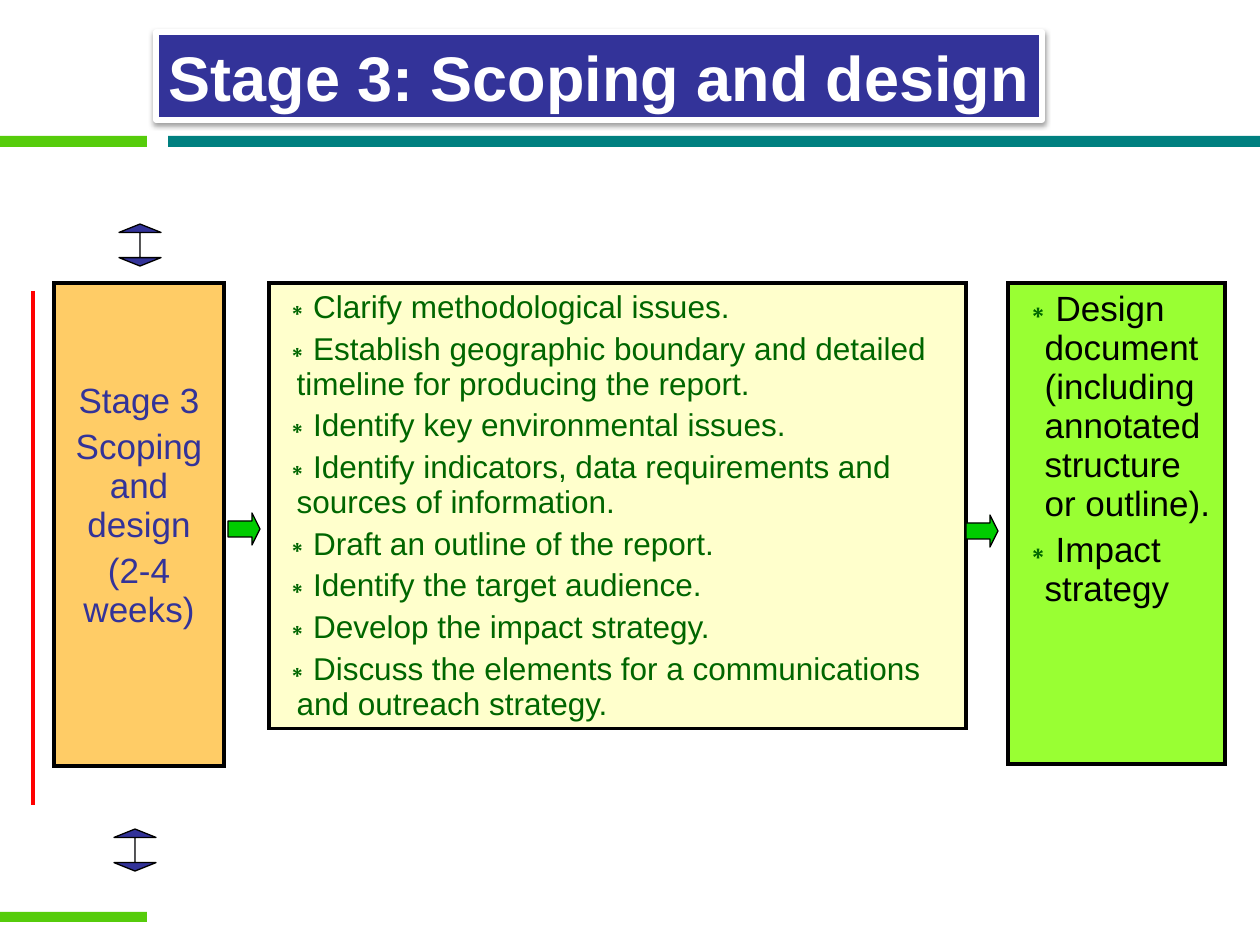
from dataclasses import dataclass

from lxml.etree import SubElement
from pptx import Presentation
from pptx.dml.color import RGBColor
from pptx.enum.shapes import MSO_CONNECTOR, MSO_SHAPE
from pptx.enum.text import MSO_ANCHOR, MSO_AUTO_SIZE, PP_ALIGN
from pptx.oxml.ns import qn
from pptx.util import Emu, Inches, Pt

PX_PER_INCH = 126
FONT = "Arial"
COLORS = {
    "teal": "008080", "lime": "56CC0B", "navy": "333399", "white": "FFFFFF",
    "black": "000000", "red": "FF0000", "arrow": "00CC00", "bullet": "006600",
    "orange": "FFCC66", "cream": "FFFFCC", "green": "99FF33",
}


@dataclass(frozen=True)
class Box:
    x: int
    y: int
    w: int
    h: int


@dataclass(frozen=True)
class Panel:
    box: Box
    row_height: int  # least height; the row grows with its text
    fill: str
    color: str
    size: int
    lines: tuple[str, ...]
    indent: int = 0  # hanging indent in px; 0 means centred, no bullets
    top: int = 7


@dataclass(frozen=True)
class Arrow:
    kind: MSO_SHAPE
    box: Box
    fill: str
    adjust: tuple[int, int]  # shaft width and head length, in percent


BARS = (
    (Box(168, 136, 1092, 11), "teal"),
    (Box(0, 136, 147, 11), "lime"),
    (Box(0, 912, 147, 10), "lime"),
)

PANELS = (
    Panel(Box(269, 283, 697, 481), 231, "cream", "bullet", 18, (
        "Clarify methodological issues.",
        "Establish geographic boundary and detailed timeline for producing the report.",
        "Identify key environmental issues.",
        "Identify indicators, data requirements and sources of information.",
        "Draft an outline of the report.",
        "Identify the target audience.",
        "Develop the impact strategy.",
        "Discuss the elements for a communications and outreach strategy.",
    ), indent=15),
    Panel(Box(54, 283, 170, 483), 483, "orange", "navy", 20, (
        "Stage 3", "Scoping and design", "(2-4 weeks)",
    ), top=99),
    Panel(Box(1008, 283, 217, 481), 481, "green", "black", 20, (
        "Design document (including annotated structure or outline).",
        "Impact strategy",
    ), indent=24),
)

UP_DOWN = (MSO_SHAPE.UP_DOWN_ARROW, "navy", (0, 20))
RIGHT = (MSO_SHAPE.RIGHT_ARROW, "arrow", (50, 25))
ARROWS = tuple(
    Arrow(kind, Box(x, y, side, side), fill, adjust)
    for (kind, fill, adjust), x, y, side in (
        (UP_DOWN, 114, 829, 42),
        (UP_DOWN, 119, 224, 42),
        (RIGHT, 966, 515, 32),
        (RIGHT, 228, 513, 32),
    )
)


def px(n: int) -> Emu:
    return Emu(round(n * 914400 / PX_PER_INCH))


def rgb(name: str) -> RGBColor:
    return RGBColor.from_string(COLORS[name])


def place(box: Box) -> tuple[Emu, ...]:
    return px(box.x), px(box.y), px(box.w), px(box.h)


def add_run(p, text: str, size: int, color: str, bold: bool = False) -> None:
    r = p.add_run()
    r.text = text
    r.font.name, r.font.size, r.font.bold = FONT, Pt(size), bold
    r.font.color.rgb = rgb(color)


def add_bullet(p, indent: int) -> None:
    ppr = p._p.get_or_add_pPr()
    ppr.set("marL", str(px(indent)))
    ppr.set("indent", str(-px(indent)))
    clr = SubElement(ppr, qn("a:buClr"))
    SubElement(clr, qn("a:srgbClr"), val=COLORS["bullet"])
    SubElement(ppr, qn("a:buFont"), typeface=FONT)
    SubElement(ppr, qn("a:buChar"), char="∗")


def add_borders(cell, color: str, width: float) -> None:
    tcpr = cell._tc.get_or_add_tcPr()
    for side in ("lnL", "lnR", "lnT", "lnB"):
        ln = SubElement(tcpr, qn(f"a:{side}"), w=str(Pt(width)))
        fill = SubElement(ln, qn("a:solidFill"))
        SubElement(fill, qn("a:srgbClr"), val=COLORS[color])


def add_panel(slide, panel: Panel) -> None:
    frame = slide.shapes.add_table(1, 1, *place(panel.box))
    table = frame.table
    table.first_row = table.horz_banding = False
    table.rows[0].height = px(panel.row_height)
    frame.height = px(panel.box.h)
    cell = table.cell(0, 0)
    add_borders(cell, "black", 2.25)
    cell.fill.solid()
    cell.fill.fore_color.rgb = rgb(panel.fill)
    cell.margin_top = px(panel.top)
    tf = cell.text_frame
    for i, line in enumerate(panel.lines):
        p = tf.add_paragraph() if i else tf.paragraphs[0]
        if panel.indent:
            add_bullet(p, panel.indent)
        else:
            p.alignment = PP_ALIGN.CENTER
        if i:
            p.space_before = Pt(panel.size * 0.2)
        add_run(p, line, panel.size, panel.color)


def add_filled(slide, kind: MSO_SHAPE, box: Box, fill: str):
    sp = slide.shapes.add_shape(kind, *place(box))
    sp.shadow.inherit = False
    sp.fill.solid()
    sp.fill.fore_color.rgb = rgb(fill)
    sp.line.fill.background()
    return sp


def add_arrow(slide, arrow: Arrow) -> None:
    sp = add_filled(slide, arrow.kind, arrow.box, arrow.fill)
    # Guides are written by name: the up-down arrow's defaults repeat adj1
    guides = sp._element.spPr.find(qn("a:prstGeom")).find(qn("a:avLst"))
    guides[:] = []
    for i, percent in enumerate(arrow.adjust, start=1):
        SubElement(guides, qn("a:gd"), name=f"adj{i}", fmla=f"val {percent * 1000}")
    sp.line.color.rgb = rgb("black")
    sp.line.width = Pt(0.75)


def add_side_line(slide, x: int, top: int, bottom: int) -> None:
    line = slide.shapes.add_connector(
        MSO_CONNECTOR.STRAIGHT, px(x), px(top), px(x), px(bottom))
    line.line.color.rgb = rgb("red")
    line.line.width = Pt(2.25)
    SubElement(line._element.spPr, qn("a:effectLst"))


def format_title(sp, text: str, box: Box) -> None:
    sp.left, sp.top, sp.width, sp.height = place(box)
    sp.fill.solid()
    sp.fill.fore_color.rgb = rgb("navy")
    sp.line.color.rgb = rgb("white")
    sp.line.width = Pt(3)
    # Soft shadow straight below the box
    sp.shadow.inherit = False
    effects = sp._element.spPr.find(qn("a:effectLst"))
    shadow = SubElement(effects, qn("a:outerShdw"), blurRad=str(Pt(3.1)),
                        dist=str(Pt(1.6)), dir="5400000", rotWithShape="0")
    clr = SubElement(shadow, qn("a:srgbClr"), val=COLORS["black"])
    SubElement(clr, qn("a:alpha"), val="38000")
    tf = sp.text_frame
    tf.word_wrap = True
    tf.auto_size = MSO_AUTO_SIZE.NONE
    tf.vertical_anchor = MSO_ANCHOR.TOP
    tf.margin_right = 0  # room for the title on one line
    p = tf.paragraphs[0]
    p.alignment = PP_ALIGN.LEFT
    add_run(p, text, 36, "white", bold=True)
    # Bring the title in front of the bars
    sp._element.getparent().append(sp._element)


def main() -> None:
    prs = Presentation()
    prs.slide_width, prs.slide_height = Inches(10), Inches(7.5)
    slide = prs.slides.add_slide(prs.slide_layouts[5])

    # Bars, then the panels for tasks, stage and outputs
    for box, fill in BARS:
        add_filled(slide, MSO_SHAPE.RECTANGLE, box, fill)
    for panel in PANELS:
        add_panel(slide, panel)

    # Flow arrows and side line
    for arrow in ARROWS:
        add_arrow(slide, arrow)
    add_side_line(slide, 33, 291, 805)

    # Title
    format_title(slide.shapes.title, "Stage 3: Scoping and design", Box(156, 32, 886, 88))
    prs.save("out.pptx")


if __name__ == "__main__":
    main()
